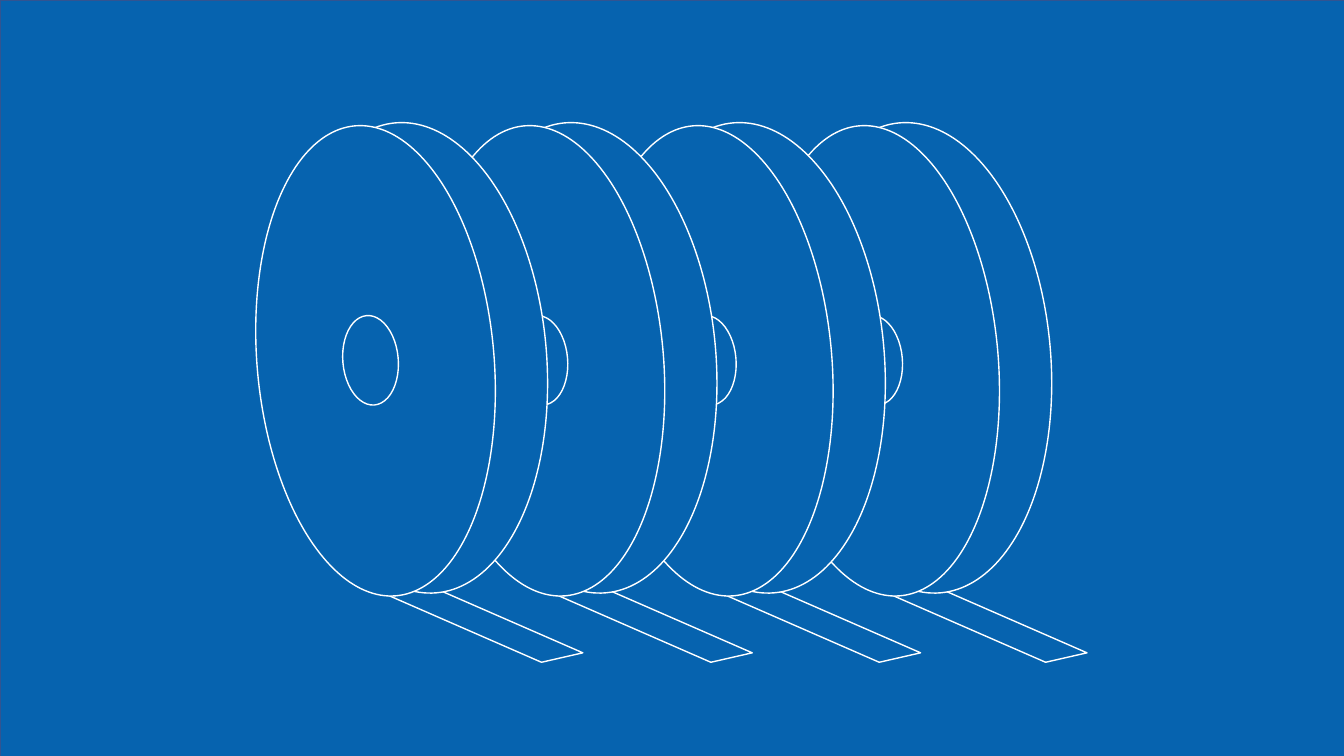
"""Draws a row of four tape reels in white outline on a blue slide."""
from pptx import Presentation
from pptx import util as u
from pptx.dml import color
from pptx.enum import shapes

PX = 9144
BLUE, WHITE, NAVY = "0663AF", "FFFFFF", "325491"
REEL_LEFTS = (755, 590, 423, 255)


def rgb(value):
    return color.RGBColor.from_string(value)


class Deck:
    def __init__(self, width, height):
        self.prs = Presentation()
        self.prs.slide_width = u.Emu(width * PX)
        self.prs.slide_height = u.Emu(height * PX)
        self.s = self.prs.slides.add_slide(self.prs.slide_layouts[6])

    def shape(self, parent, kind, x, y, w, h, line=WHITE, rotation=0):
        sp = parent.add_shape(kind, *(u.Emu(v * PX) for v in (x, y, w, h)))
        sp.rotation = rotation
        sp.shadow.inherit = False
        sp.fill.solid()
        sp.fill.fore_color.rgb = rgb(BLUE)
        sp.line.color.rgb = rgb(line)
        sp.line.width = u.Pt(1)
        return sp

    def background(self):
        self.shape(self.s.shapes, shapes.MSO_SHAPE.RECTANGLE, 0, 0, 1339, 776, line=NAVY)

    def disc(self, parent, x, y, w, h):
        self.shape(parent, shapes.MSO_SHAPE.OVAL, x, y, w, h, rotation=355)

    def strip(self, parent, x, y, w, h):
        sp = self.shape(parent, shapes.MSO_SHAPE.PARALLELOGRAM, x, y, w, h, rotation=23.6)
        sp.adjustments[0] = 1.352

    def reel(self, x):
        grp = self.s.shapes.add_group_shape().shapes
        self.strip(grp, x + 114, 604, 213, 25)
        self.disc(grp, x + 28, 121, 259, 468)
        self.disc(grp, x, 124, 235, 468)
        self.disc(grp, x + 85, 313, 55, 89)


def main():
    deck = Deck(1333, 750)
    deck.background()
    for x in REEL_LEFTS:
        deck.reel(x)
    deck.prs.save("out.pptx")


if __name__ == "__main__":
    main()
